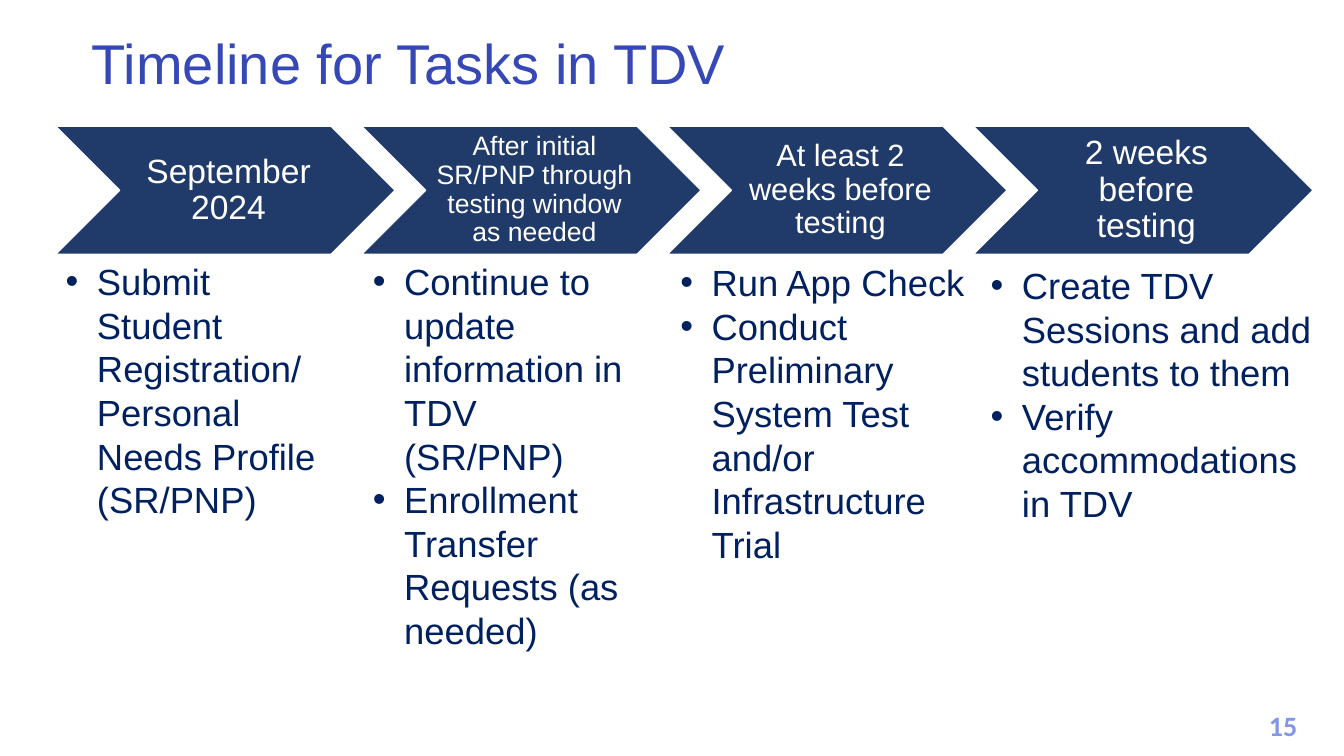
from dataclasses import dataclass

from lxml import etree
from pptx import Presentation
from pptx.dml.color import RGBColor
from pptx.enum.shapes import MSO_SHAPE
from pptx.enum.text import MSO_ANCHOR, MSO_AUTO_SIZE, PP_ALIGN
from pptx.oxml.ns import qn
from pptx.util import Cm, Pt

CHEVRON = MSO_SHAPE.CHEVRON
TOP, MIDDLE = MSO_ANCHOR.TOP, MSO_ANCHOR.MIDDLE
LEFT, CENTER = PP_ALIGN.LEFT, PP_ALIGN.CENTER
NO_FIT = MSO_AUTO_SIZE.NONE
COMPARISON_LAYOUT = 4

WHITE, NAVY, TEXT_BLUE = "FFFFFF", "203B6A", "002060"
TITLE_BLUE, NUMBER_BLUE = "3647B6", "8397E7"

# Chevron row, in centimetres
ROW_LEFT, ROW_TOP, STEP = 1.4, 3.18, 7.71
CHEVRON_W, CHEVRON_H = 8.56, 3.23
HANG = 0.79


@dataclass
class Stage:
    label: str
    label_size: int
    tasks: list[str]
    box: tuple[float, float, float, float]


STAGES = [
    Stage("September 2024", 24,
          ["Submit Student Registration/\nPersonal Needs Profile (SR/PNP)"],
          (1.4, 6.4, 7.16, 6.93)),
    Stage("After initial SR/PNP through testing window as needed", 19,
          ["Continue to update information in TDV (SR/PNP)",
           "Enrollment Transfer Requests (as needed)"],
          (9.14, 6.4, 6.83, 10.26)),
    Stage("At least 2 weeks before testing", 22,
          ["Run App Check",
           "Conduct Preliminary System Test and/or Infrastructure Trial"],
          (16.89, 6.43, 7.75, 8.03)),
    Stage("2 weeks before testing", 24,
          ["Create TDV Sessions and add students to them",
           "Verify accommodations in TDV"],
          (24.71, 6.5, 8.94, 6.93)),
]


def rgb(color: str) -> RGBColor:
    return RGBColor.from_string(color)


def place(sp, left: float, top: float, width: float, height: float) -> None:
    sp.left, sp.top = Cm(left), Cm(top)
    sp.width, sp.height = Cm(width), Cm(height)


def add_bullet(p) -> None:
    pPr = p._p.get_or_add_pPr()
    pPr.set("marL", str(Cm(HANG)))
    pPr.set("indent", str(-Cm(HANG)))
    etree.SubElement(pPr, qn("a:buFont")).set("typeface", "Arial")
    etree.SubElement(pPr, qn("a:buChar")).set("char", "•")


def write(tf, paragraphs: list[str], *, size: float, color: str,
          font: str = "Arial", bold: bool = False, align=LEFT, anchor=TOP,
          line_spacing: float = 1.0, bullets: bool = False) -> None:
    tf.word_wrap = True
    tf.auto_size = NO_FIT
    tf.vertical_anchor = anchor
    for i, text in enumerate(paragraphs):
        p = tf.paragraphs[0] if i == 0 else tf.add_paragraph()
        p.text = text
        if bullets:
            add_bullet(p)
        p.alignment = align
        p.line_spacing = line_spacing
        p.space_before = Pt(0)
        for r in p.runs:
            r.font.name, r.font.size, r.font.bold = font, Pt(size), bold
            r.font.color.rgb = rgb(color)


def add_chevron(slide, index: int, stage: Stage) -> None:
    sp = slide.shapes.add_shape(CHEVRON, Cm(ROW_LEFT + index * STEP), Cm(ROW_TOP),
                                Cm(CHEVRON_W), Cm(CHEVRON_H))
    sp.shadow.inherit = False
    sp.fill.solid()
    sp.fill.fore_color.rgb = rgb(NAVY)
    sp.line.color.rgb = rgb(WHITE)
    sp.line.width = Pt(1)
    tf = sp.text_frame
    tf.margin_left = Cm(0.25)
    tf.margin_right = tf.margin_top = tf.margin_bottom = Cm(0.09)
    write(tf, [stage.label], size=stage.label_size, color=WHITE,
          align=CENTER, anchor=MIDDLE, line_spacing=0.9)


def main() -> None:
    prs = Presentation()
    prs.slide_width, prs.slide_height = Cm(33.87), Cm(19.05)
    slide = prs.slides.add_slide(prs.slide_layouts[COMPARISON_LAYOUT])

    # Title
    title = slide.shapes.title
    place(title, 2.06, 0.58, 32.51, 1.96)
    write(title.text_frame, ["Timeline for Tasks in TDV"], size=40, color=TITLE_BLUE)

    # Stages with their task lists
    bodies = list(slide.placeholders)[1:]
    for i, (stage, body) in enumerate(zip(STAGES, bodies)):
        add_chevron(slide, i, stage)
        place(body, *stage.box)
        write(body.text_frame, stage.tasks, size=26, color=TEXT_BLUE, bullets=True)

    # Slide number
    number = slide.shapes.add_textbox(Cm(31.55), Cm(17.73), Cm(1.57), Cm(1.12))
    write(number.text_frame, ["15"], size=20, color=NUMBER_BLUE,
          font="Calibri", bold=True, align=CENTER)

    prs.save("out.pptx")


if __name__ == "__main__":
    main()
